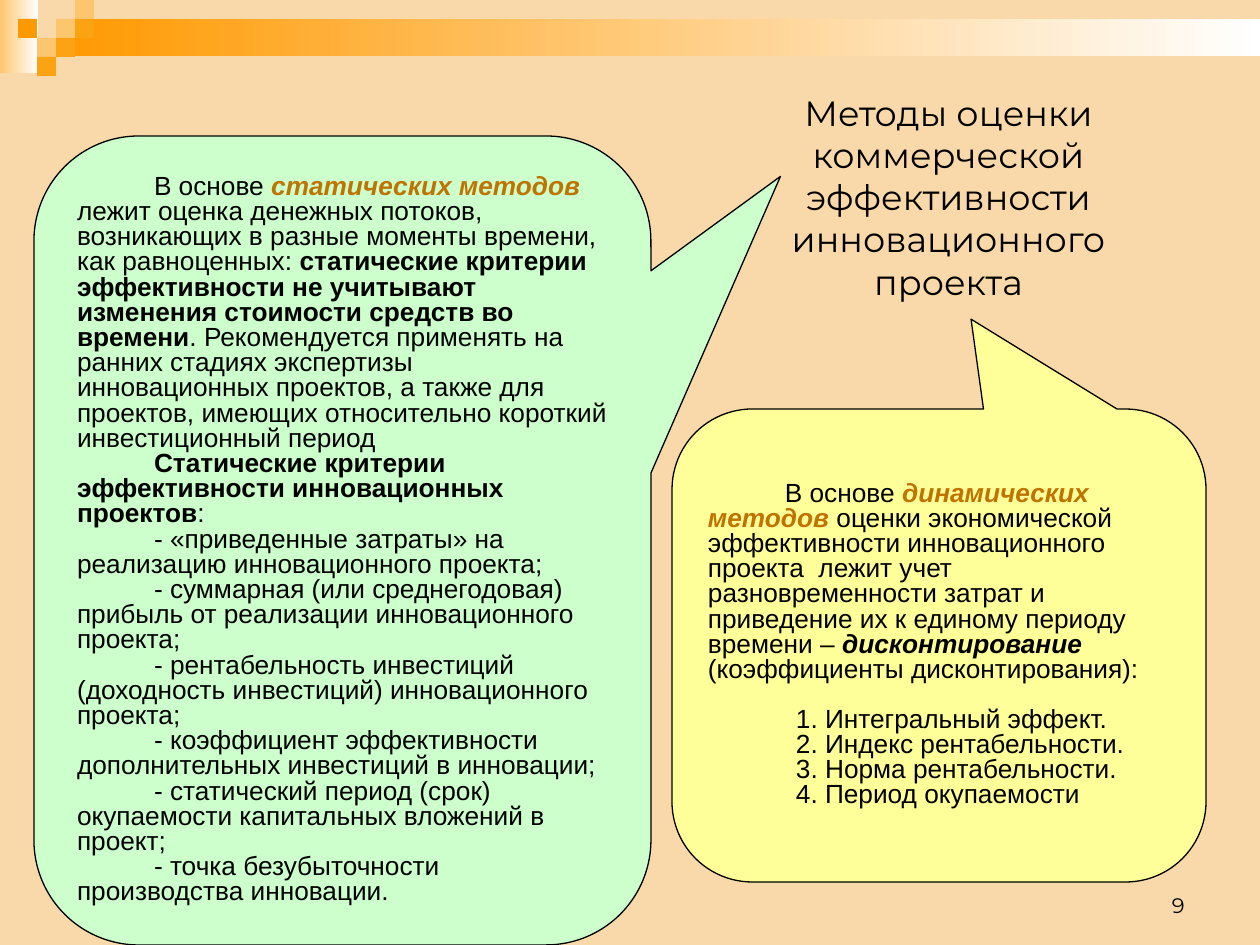
"""Builds a slide on static and dynamic methods of evaluating an innovation project."""
from pptx import Presentation
from pptx.dml.color import RGBColor
from pptx.enum.shapes import MSO_SHAPE as Shape
from pptx.enum.text import MSO_ANCHOR as Anchor, PP_ALIGN as Align
from pptx.util import Pt

PX = 914400 / 126
BLACK = RGBColor(0x00, 0x00, 0x00)
WHITE = RGBColor(0xFF, 0xFF, 0xFF)
SAND = RGBColor(0xF9, 0xD9, 0xA9)
PEACH = RGBColor(0xFC, 0xC6, 0x6E)
AMBER = RGBColor(0xFB, 0xA3, 0x13)
ORANGE = RGBColor(0xFF, 0x99, 0x00)
BROWN = RGBColor(0xBF, 0x73, 0x00)
GREEN = RGBColor(0xCC, 0xFF, 0xCC)
YELLOW = RGBColor(0xFF, 0xFF, 0x99)

PLAIN = (False, False, BLACK)
BOLD = (True, False, BLACK)
BOLD_ITALIC = (True, True, BLACK)
TERM = (True, True, BROWN)


def emu(*lengths):
    return [round(length * PX) for length in lengths]


def add_run(paragraph, text, size, font_name, style=PLAIN):
    run = paragraph.add_run()
    run.text = text
    run.font.size = Pt(size)
    run.font.name = font_name
    run.font.bold, run.font.italic, run.font.color.rgb = style


presentation = Presentation()
presentation.slide_width, presentation.slide_height = emu(1260, 945)
slide = presentation.slides.add_slide(presentation.slide_layouts[6])
slide.background.fill.solid()
slide.background.fill.fore_color.rgb = SAND

for box, color in [((0, 0, 38, 73), PEACH), ((57, 19, 1203, 37), ORANGE)]:
    band = slide.shapes.add_shape(Shape.RECTANGLE, *emu(*box))
    band.shadow.inherit = False
    band.line.fill.background()
    band.fill.gradient()
    band.fill.gradient_angle = 0
    for stop, stop_color, position in zip(band.fill.gradient_stops, (color, WHITE), (0, 1)):
        stop.color.rgb = stop_color
        stop.position = position

SQUARE = 19
squares = [
    (3, 1, PEACH), (4, 0, PEACH), (4, 1, AMBER), (2, 2, PEACH),
    (1, 1, ORANGE), (3, 2, AMBER), (2, 3, AMBER),
]
for column, row, color in squares:
    square = slide.shapes.add_shape(
        Shape.RECTANGLE, *emu(column * SQUARE - 1, row * SQUARE, SQUARE, SQUARE))
    square.shadow.inherit = False
    square.line.fill.background()
    square.fill.solid()
    square.fill.fore_color.rgb = color

labels = [
    ((725, 158, 447, 78), Anchor.MIDDLE, Align.CENTER, 20,
     ["Методы оценки коммерческой", "эффективности инновационного проекта"]),
    ((903, 861, 294, 63), Anchor.BOTTOM, Align.RIGHT, 12, ["9"]),
]
for box, anchor, alignment, size, lines in labels:
    frame = slide.shapes.add_textbox(*emu(*box)).text_frame
    frame.word_wrap = True
    frame.vertical_anchor = anchor
    paragraph = frame.paragraphs[0]
    paragraph.alignment = alignment
    for index, line in enumerate(lines):
        if index:
            paragraph.add_line_break()
        add_run(paragraph, line, size, "Montserrat")

static_criteria = [
    "«приведенные затраты» на реализацию инновационного проекта;",
    "суммарная (или среднегодовая) прибыль от реализации инновационного проекта;",
    "рентабельность инвестиций (доходность инвестиций) инновационного проекта;",
    "коэффициент эффективности дополнительных инвестиций в инновации;",
    "статический период (срок) окупаемости капитальных вложений в проект;",
    "точка безубыточности производства инновации.",
]
static_text = [
    (0, 0, [
        ("В основе ", PLAIN),
        ("статических методов ", TERM),
        ("лежит оценка денежных потоков, возникающих в разные моменты времени, "
         "как равноценных: ", PLAIN),
        ("статические критерии эффективности не учитывают изменения стоимости "
         "средств во времени", BOLD),
        (". Рекомендуется применять на ранних стадиях экспертизы инновационных "
         "проектов, а также для проектов, имеющих относительно короткий "
         "инвестиционный период", PLAIN),
    ]),
    (0, 0, [("Статические критерии эффективности инновационных проектов", BOLD), (":", PLAIN)]),
]
static_text += [(0, 0, [(f"- {criterion}", PLAIN)]) for criterion in static_criteria]

dynamic_criteria = [
    "Интегральный эффект.", "Индекс рентабельности.",
    "Норма рентабельности.", "Период окупаемости",
]
dynamic_text = [
    (0, 0, [
        ("В основе ", PLAIN),
        ("динамических методов ", TERM),
        ("оценки экономической эффективности инновационного проекта  лежит учет "
         "разновременности затрат и приведение их к единому периоду времени – ", PLAIN),
        ("дисконтирование", BOLD_ITALIC),
        (" (коэффициенты дисконтирования):", PLAIN),
    ]),
]
dynamic_text += [
    (11, 14 if number == 1 else 0, [(f"{number}. {criterion}", PLAIN)])
    for number, criterion in enumerate(dynamic_criteria, 1)
]

callouts = [
    ((34, 136, 617, 809), (0.71, -0.45, 0.17), GREEN, static_text),
    ((672, 409, 534, 473), (0.06, -0.69, 0.17), YELLOW, dynamic_text),
]
for box, adjustments, color, paragraphs in callouts:
    callout = slide.shapes.add_shape(Shape.ROUNDED_RECTANGULAR_CALLOUT, *emu(*box))
    callout.shadow.inherit = False
    for index, value in enumerate(adjustments):
        callout.adjustments[index] = value
    callout.fill.solid()
    callout.fill.fore_color.rgb = color
    callout.line.color.rgb = BLACK
    callout.line.width = Pt(0.75)
    frame = callout.text_frame
    frame.word_wrap = True
    frame.vertical_anchor = Anchor.MIDDLE
    for index, (margin, space_before, runs) in enumerate(paragraphs):
        paragraph = frame.add_paragraph() if index else frame.paragraphs[0]
        paragraph.alignment = Align.LEFT
        paragraph.line_spacing = 0.8
        paragraph.space_before = Pt(space_before)
        properties = paragraph._p.get_or_add_pPr()
        for name, length in zip(("marL", "indent"), emu(margin, 77)):
            properties.set(name, str(length))
        for text, style in runs:
            add_run(paragraph, text, 15, "Arial", style)

presentation.save("out.pptx")
